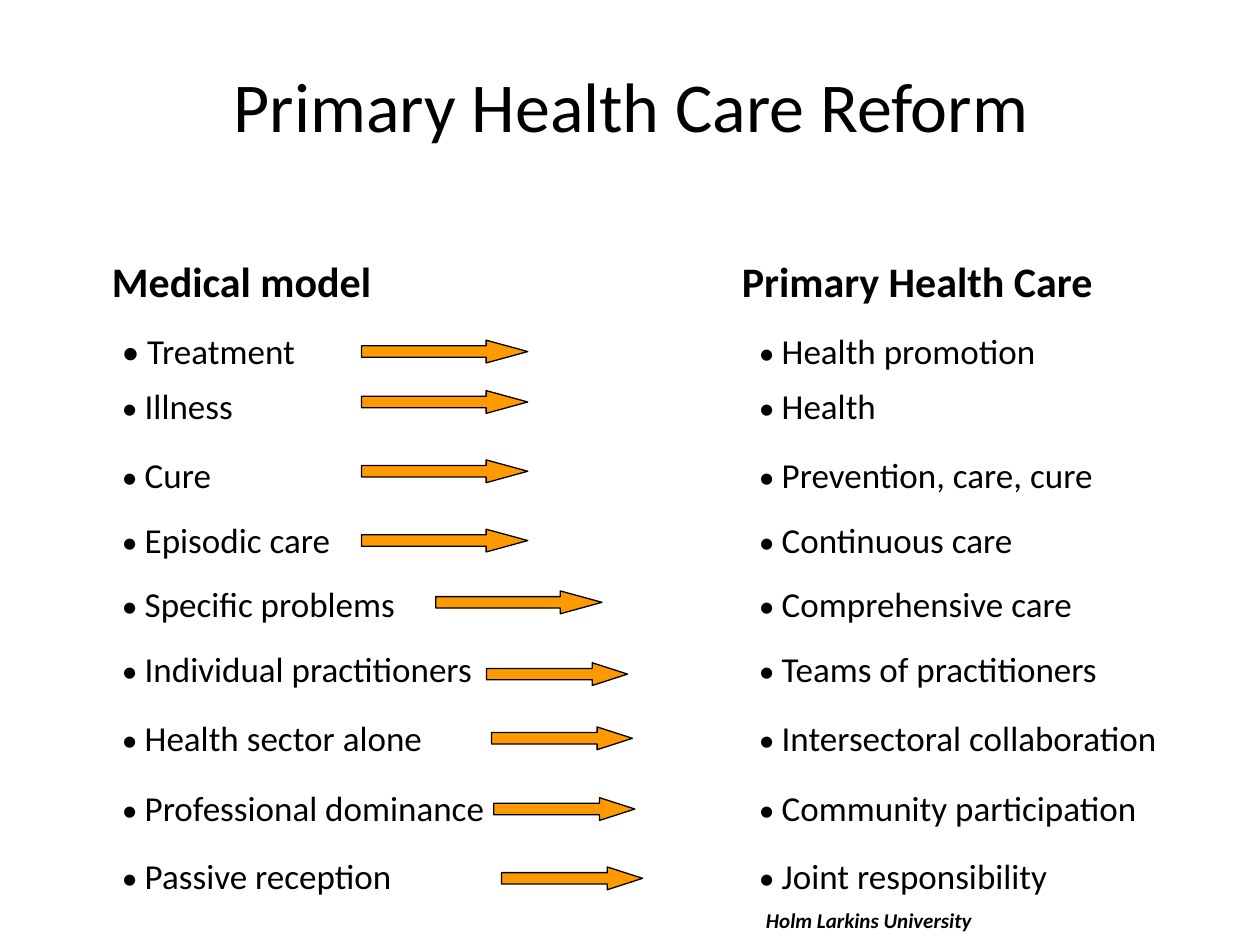
from lxml.etree import SubElement
from pptx import Presentation
from pptx.dml.color import RGBColor
from pptx.enum.shapes import MSO_SHAPE as SHAPE
from pptx.enum.text import MSO_ANCHOR as ANCHOR, PP_ALIGN as ALIGN
from pptx.oxml.ns import qn
from pptx.util import Pt

COLORS = {"text": "000000", "arrow": "FF9900", "line": "000000"}
FONT = "Calibri"
TEXT_WIDTH = 632
ROW_LEFT = 62.6
ARROW_HEIGHT = 13

# left term, right term, text top, arrow left, arrow top, arrow width
ROWS = [
    ("Treatment", "Health promotion", 185, 206.6, 194.4, 95),
    ("Illness", "Health", 216, 206.6, 223.2, 95),
    ("Cure", "Prevention, care, cure", 255.6, 206.6, 262.8, 95),
    ("Episodic care", "Continuous care", 292.5, 206.6, 302.4, 95),
    ("Specific problems", "Comprehensive care", 329.5, 249, 337.7, 95),
    ("Individual practitioners", "Teams of practitioners", 366.5, 278, 378.7, 80.6),
    ("Health sector alone", "Intersectoral collaboration", 406, 280.8, 415.4, 80.6),
    ("Professional dominance", "Community participation", 445.7, 282.2, 455.8, 80.6),
    ("Passive reception", "Joint responsibility", 484.6, 286.6, 495.4, 80.6),
]


def color(name):
    return RGBColor.from_string(COLORS[name])


def add_run(p, text, size, **formats):
    r = p.add_run()
    r.text = text
    r.font.color.rgb = color("text")
    for key, value in {"name": FONT, "size": Pt(size), **formats}.items():
        setattr(r.font, key, value)


def add_tab_stop(p, position):
    tabs = SubElement(p._p.get_or_add_pPr(), qn("a:tabLst"))
    SubElement(tabs, qn("a:tab"), pos=str(Pt(position)), algn="l")


def add_line(slide, left, top, width, height, runs, tab=None):
    """Add a one-line text box; each run is (text, size, formats)."""
    tf = slide.shapes.add_textbox(Pt(left), Pt(top), Pt(width), Pt(height)).text_frame
    tf.word_wrap = True
    p = tf.paragraphs[0]
    if tab:
        add_tab_stop(p, tab)
    for text, size, formats in runs:
        add_run(p, text, size, **formats)


def add_title(slide, text):
    sp = slide.shapes.title
    box = {"left": 36.7, "top": 31.7, "width": 648, "height": 56.2}
    for key, value in box.items():
        setattr(sp, key, Pt(value))
    tf = sp.text_frame
    tf.vertical_anchor = ANCHOR.MIDDLE
    p = tf.paragraphs[0]
    p.alignment = ALIGN.CENTER
    add_run(p, text, 40)


def add_arrow(slide, left, top, width):
    """Add a right arrow whose head takes a quarter of its width."""
    sp = slide.shapes.add_shape(
        SHAPE.RIGHT_ARROW, Pt(left), Pt(top), Pt(width), Pt(ARROW_HEIGHT))
    sp.adjustments[0] = 0.5
    sp.adjustments[1] = width / 4 / ARROW_HEIGHT
    sp.shadow.inherit = False
    sp.fill.solid()
    sp.fill.fore_color.rgb = color("arrow")
    sp.line.color.rgb = color("line")
    sp.line.width = Pt(0.75)


def add_comparison(slide, before, after, top, bullet_size):
    runs = [("• ", bullet_size, {}), (before + "\t", 20, {}),
            ("• ", 18, {}), (after, 20, {})]
    add_line(slide, ROW_LEFT, top, TEXT_WIDTH, 31, runs, tab=364)


def main():
    prs = Presentation()
    prs.slide_width, prs.slide_height = Pt(720), Pt(540)
    slide = prs.slides.add_slide(prs.slide_layouts[5])
    add_title(slide, "Primary Health Care Reform")
    headings = [("Medical model\tPrimary Health Care", 24, {"bold": True})]
    add_line(slide, 56.9, 142.6, TEXT_WIDTH, 36, headings, tab=360)
    for i, (before, after, top, *_) in enumerate(ROWS):
        add_comparison(slide, before, after, top, 18 if i else 20)
    for *_, left, top, width in ROWS:
        add_arrow(slide, left, top, width)
    source = [("Holm Larkins University", 12, {"bold": True, "italic": True})]
    add_line(slide, 430.6, 514.8, 289.4, 21.6, source)
    prs.save("out.pptx")


if __name__ == "__main__":
    main()
